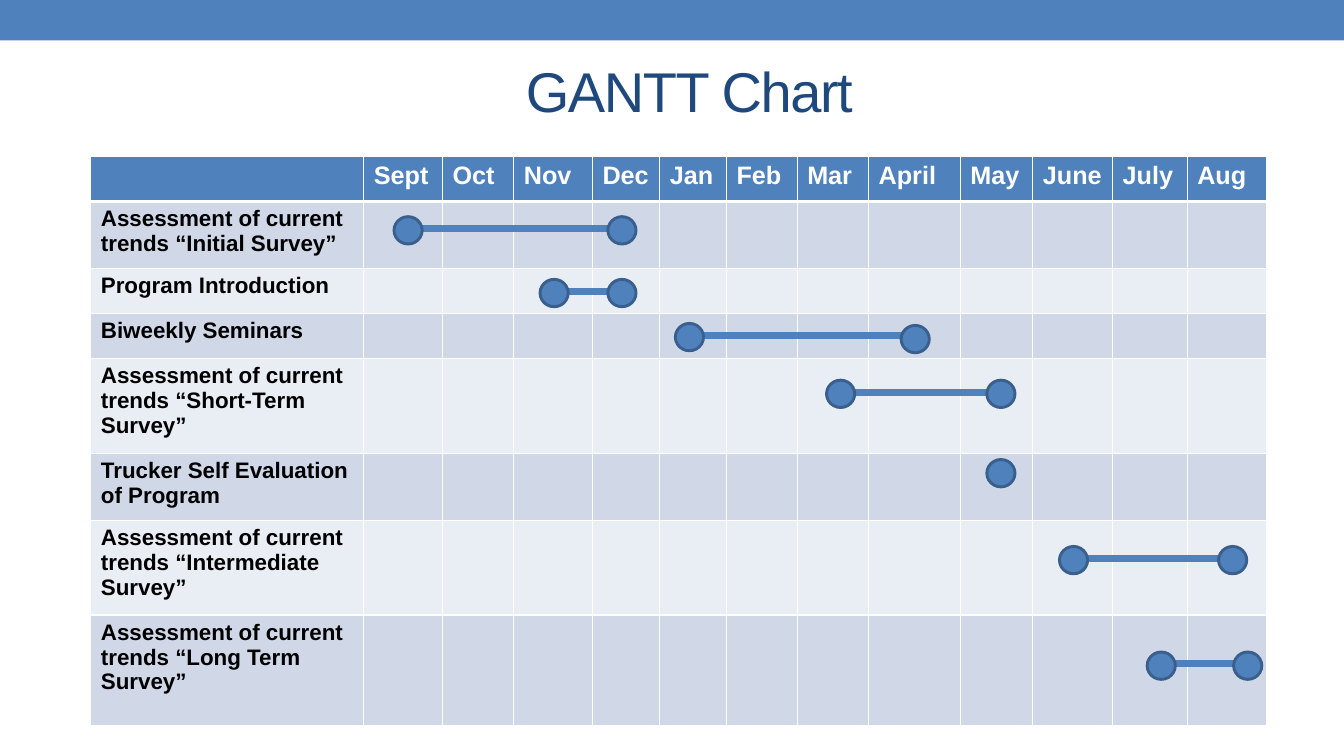
"""Build the GANTT chart slide."""
from pptx import Presentation
from pptx.dml.color import RGBColor
from pptx.enum.shapes import MSO_CONNECTOR, MSO_SHAPE
from pptx.enum.text import MSO_ANCHOR, PP_ALIGN
from pptx.oxml.ns import qn
from pptx.util import Cm, Pt
from lxml.etree import SubElement

BLUE = RGBColor(0x4F, 0x81, 0xBD)
EDGE = RGBColor(0x3A, 0x5F, 0x8C)
NAVY = RGBColor(0x1F, 0x49, 0x7D)
DARK = RGBColor(0xD0, 0xD8, 0xE8)
PALE = RGBColor(0xE9, 0xED, 0xF4)
WHITE = RGBColor(0xFF, 0xFF, 0xFF)
BLACK = RGBColor(0, 0, 0)

MONTHS = ["Sept", "Oct", "Nov", "Dec", "Jan", "Feb",
          "Mar", "April", "May", "June", "July", "Aug"]
WIDTHS = [6.88, 1.98, 1.8, 1.98, 1.7, 1.68, 1.78,
          1.8, 2.31, 1.83, 2.01, 1.88, 2.01]
HEIGHTS = [1.14, 1.68, 1.14, 1.14, 2.39, 1.68, 2.39, 2.79]
TASKS = [
    ("Assessment of current trends “Initial Survey”", [(9.93, 5.46), (15.32, 5.46)]),
    ("Program Introduction", [(13.61, 7.04), (15.32, 7.04)]),
    ("Biweekly Seminars", [(17.02, 8.15), (22.71, 8.2)]),
    ("Assessment of current trends “Short-Term Survey”", [(20.83, 9.58), (24.87, 9.58)]),
    ("Trucker Self Evaluation of Program", [(24.87, 11.58)]),
    ("Assessment of current trends “Intermediate Survey”", [(26.7, 13.77), (30.71, 13.77)]),
    ("Assessment of current trends “Long Term Survey”", [(28.91, 16.43), (31.09, 16.43)]),
]
DOT_W, DOT_H = 0.71, 0.69


def write(frame, text, size, color, bold=False, align=PP_ALIGN.LEFT, space=0):
    para = frame.paragraphs[0]
    para.alignment = align
    run = para.add_run()
    run.text = text
    run.font.name = "Arial"
    run.font.size = Pt(size)
    run.font.bold = bold
    run.font.color.rgb = color
    if space:
        run.font._element.set("spc", str(space))


def border(cell, side, width):
    line = SubElement(cell._tc.get_or_add_tcPr(), qn("a:ln" + side), w=str(Pt(width)))
    fill = SubElement(line, qn("a:solidFill"))
    SubElement(fill, qn("a:srgbClr"), val=str(WHITE))


deck = Presentation()
deck.slide_width, deck.slide_height = Cm(33.87), Cm(19.05)
slide = deck.slides.add_slide(deck.slide_layouts[5])
shapes = slide.shapes

bar = shapes.add_shape(MSO_SHAPE.RECTANGLE, 0, 0, deck.slide_width, Cm(1.02))
bar.shadow.inherit = False
bar.fill.solid()
bar.fill.fore_color.rgb = BLUE
bar.line.fill.background()

title = shapes.title
title.left, title.top, title.width, title.height = Cm(2.13), Cm(0.91), Cm(30.48), Cm(2.74)
title.text_frame.vertical_anchor = MSO_ANCHOR.MIDDLE
write(title.text_frame, "GANTT Chart", 40, NAVY, align=PP_ALIGN.CENTER, space=-100)

table = shapes.add_table(len(HEIGHTS), len(WIDTHS), Cm(2.29), Cm(3.94),
                         Cm(sum(WIDTHS)), Cm(sum(HEIGHTS))).table
for col, width in zip(table.columns, WIDTHS):
    col.width = Cm(width)
for row, height in zip(table.rows, HEIGHTS):
    row.height = Cm(height)
for r, row in enumerate(table.rows):
    for cell in row.cells:
        for side in "LRTB":
            thick = (r, side) in [(0, "B"), (1, "T")]
            border(cell, side, 3 if thick else 1)
        cell.fill.solid()
        cell.fill.fore_color.rgb = BLUE if r == 0 else DARK if r % 2 else PALE

for c, month in enumerate(MONTHS, 1):
    write(table.cell(0, c).text_frame, month, 18, WHITE, bold=True)

for r, (task, dots) in enumerate(TASKS, 1):
    write(table.cell(r, 0).text_frame, task, 16, BLACK, bold=True)
    if len(dots) == 2:
        (start, top), (end, _) = dots
        mid = Cm(top + 0.3)
        span = shapes.add_connector(MSO_CONNECTOR.STRAIGHT, Cm(start + DOT_W / 2), mid,
                                    Cm(end + DOT_W / 2), mid)
        span.line.color.rgb = BLUE
        span.line.width = Pt(5)
        SubElement(span._element.spPr, qn("a:effectLst"))
    for left, top in dots:
        dot = shapes.add_shape(MSO_SHAPE.OVAL, Cm(left), Cm(top), Cm(DOT_W), Cm(DOT_H))
        dot.shadow.inherit = False
        dot.fill.solid()
        dot.fill.fore_color.rgb = BLUE
        dot.line.color.rgb = EDGE
        dot.line.width = Pt(2.08)

deck.save("out.pptx")
